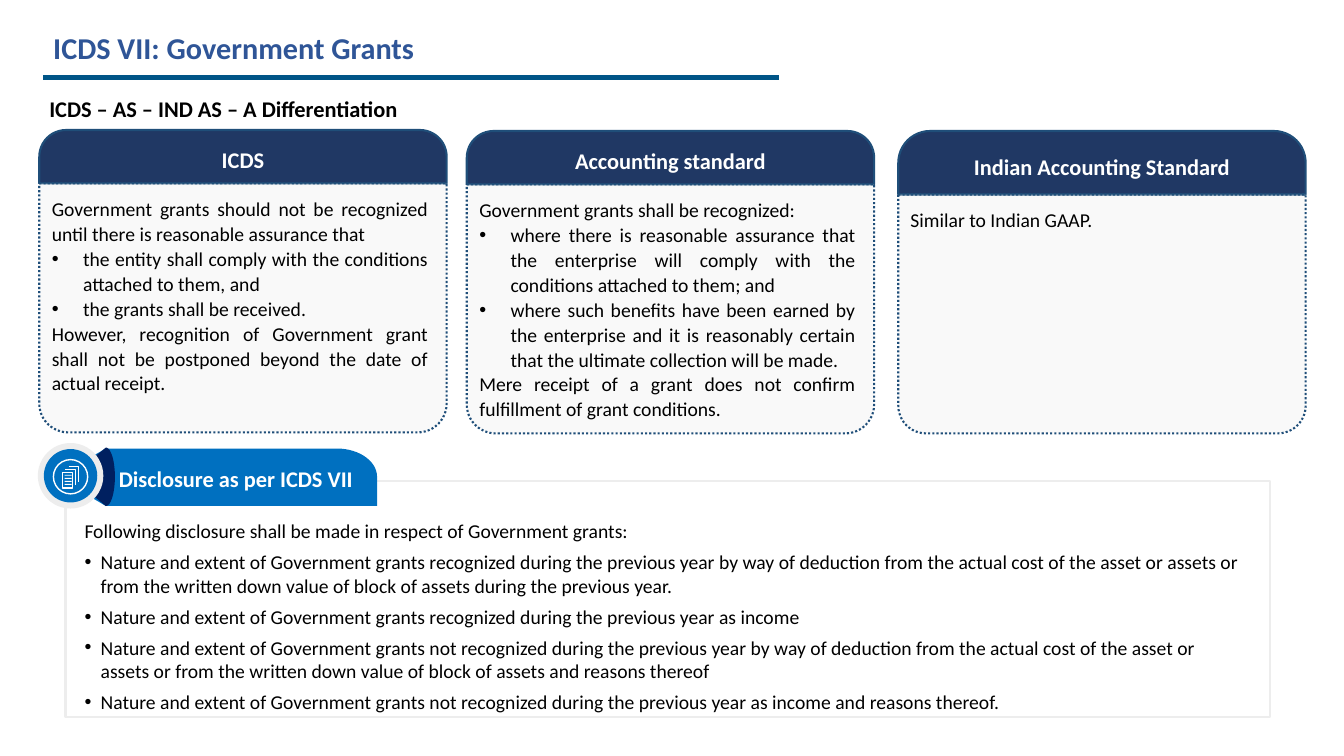
import math
from lxml import etree
from pptx import Presentation
from pptx.dml.color import RGBColor
from pptx.enum import dml, shapes, text
from pptx.oxml.ns import qn
from pptx.util import Inches, Pt

S, A = shapes.MSO_SHAPE, text.PP_ALIGN


def style(sp, fill=None, line=None, width=1.5):
    sp.shadow.inherit = False
    if fill:
        sp.fill.solid()
        sp.fill.fore_color.rgb = RGBColor.from_string(fill)
    else:
        sp.fill.background()
    if line:
        sp.line.color.rgb = RGBColor.from_string(line)
        sp.line.width = Pt(width)
    else:
        sp.line.fill.background()


def write(sp, lines, size, color='000000', bold=False, align=A.LEFT, spacing=1.0,
          before=0, indent=0, anchor=text.MSO_ANCHOR.TOP, insets=(0.1, 0.05, 0.1, 0.05)):
    tf = sp.text_frame
    tf.word_wrap = True
    tf.vertical_anchor = anchor
    tf.margin_left, tf.margin_top, tf.margin_right, tf.margin_bottom = map(Inches, insets)
    tf.text = '\n'.join(line.removeprefix('• ') for line in lines)
    for p, line in zip(tf.paragraphs, lines):
        p.alignment, p.line_spacing, p.space_before = align, spacing, Pt(before)
        f = p.runs[0].font
        f.name, f.size, f.bold = 'Calibri', Pt(size), bold
        f.color.rgb = RGBColor.from_string(color)
        if line.startswith('• '):
            pPr = p._p.get_or_add_pPr()
            pPr.set('marL', str(Inches(indent)))
            pPr.set('indent', str(-Inches(indent)))
            etree.SubElement(pPr, qn('a:buFont')).set('typeface', 'Arial')
            etree.SubElement(pPr, qn('a:buChar')).set('char', '•')


prs = Presentation()
prs.slide_width, prs.slide_height = Inches(13.33), Inches(7.5)
s = prs.slides.add_slide(prs.slide_layouts[6])
MIDDLE = text.MSO_ANCHOR.MIDDLE

tb = s.shapes.add_textbox(Inches(0.43), Inches(0.34), Inches(4.83), Inches(0.31))
write(tb, ['ICDS VII: Government Grants'], 21.6, '2F5597', True, spacing=0.9, anchor=MIDDLE)
rule = s.shapes.add_connector(shapes.MSO_CONNECTOR.STRAIGHT,
                              Inches(0.43), Inches(0.77), Inches(7.73), Inches(0.77))
rule.line.color.rgb = RGBColor.from_string('005587')
rule.line.width = Pt(3)
etree.SubElement(rule._element.spPr, qn('a:effectLst'))
tb = s.shapes.add_textbox(Inches(0.39), Inches(0.89), Inches(12.25), Inches(0.37))
write(tb, ['ICDS – AS – IND AS – A Differentiation'], 16, bold=True)

cards = [
    (0.39, 1.29, 0.53, 4.29, 'ICDS', [
        'Government grants should not be recognized until there is reasonable assurance that',
        '• the entity shall comply with the conditions attached to them, and',
        '• the grants shall be received.',
        'However, recognition of Government grant shall not be postponed beyond the date of '
        'actual receipt.']),
    (4.63, 1.3, 0.53, 4.3, 'Accounting standard', [
        'Government grants shall be recognized:',
        '• where there is reasonable assurance that the enterprise will comply with the '
        'conditions attached to them; and',
        '• where such benefits have been earned by the enterprise and it is reasonably certain '
        'that the ultimate collection will be made.',
        'Mere receipt of a grant does not confirm fulfillment of grant conditions.']),
    (8.91, 1.3, 0.63, 4.3, 'Indian Accounting Standard', ['Similar to Indian GAAP.']),
]
for x, y, head, bottom, title, lines in cards:
    sp = s.shapes.add_shape(S.ROUND_2_SAME_RECTANGLE, Inches(x), Inches(y), Inches(4.04), Inches(head))
    sp.adjustments[0], sp.adjustments[1] = 0.5, 0
    style(sp, '203864', '1F4E79')
    write(sp, [title], 16, 'FFFFFF', True, A.CENTER, anchor=MIDDLE, insets=(0, 0.1, 0, 0.12))
    sp = s.shapes.add_shape(S.ROUND_2_SAME_RECTANGLE, Inches(x), Inches(y + head),
                            Inches(4.04), Inches(bottom - y - head))
    sp.adjustments[0], sp.adjustments[1] = 0, 0.116
    style(sp, 'ECECEC', '1F4E79')
    sp.line.dash_style = dml.MSO_LINE.ROUND_DOT
    clr = sp._element.spPr.find(qn('a:solidFill'))[0]
    etree.SubElement(clr, qn('a:alpha')).set('val', '28000')
    write(sp, lines, 14, align=A.JUSTIFY, spacing=1.06, indent=0.31, insets=(0.04, 0.12, 0.1, 0.1))

panel = s.shapes.add_shape(S.RECTANGLE, Inches(0.65), Inches(4.77), Inches(11.95), Inches(2.34))
style(panel, 'FFFFFF', 'EDEDED')
tb = s.shapes.add_textbox(Inches(0.74), Inches(5.1), Inches(11.67), Inches(2.34))
write(tb, [
    'Following disclosure shall be made in respect of Government grants:',
    '• Nature and extent of Government grants recognized during the previous year by way of '
    'deduction from the actual cost of the asset or assets or from the written down value of '
    'block of assets during the previous year.',
    '• Nature and extent of Government grants recognized during the previous year as income',
    '• Nature and extent of Government grants not recognized during the previous year by way of '
    'deduction from the actual cost of the asset or assets or from the written down value of '
    'block of assets and reasons thereof',
    '• Nature and extent of Government grants not recognized during the previous year as income '
    'and reasons thereof.'], 14, before=5.3, indent=0.16)

turns = [math.radians(a) for a in range(-90, 91, 6)]
corner = [(3.34 + 0.4 * math.cos(t), 4.73 + 0.28 * math.sin(t)) for t in turns if t <= 0]
edge = [(1.05 + 0.09 * math.cos(t), 4.73 + 0.29 * math.sin(t)) for t in turns]
tab = [(0.56, 4.73), (1.05, 4.45)] + corner + [(3.74, 5.02), (1.05, 5.02)]
for points, color in [(tab, '0070C0'), ([(0.7, 4.73)] + edge, '002060')]:
    points = [(Inches(x), Inches(y)) for x, y in points]
    fb = s.shapes.build_freeform(*points[0])
    fb.add_line_segments(points[1:], close=True)
    style(fb.convert_to_shape(), color)

for cy, d, fill, line in [(4.72, 0.65, 'EDEDED', None), (4.72, 0.53, '0070C0', None),
                          (4.73, 0.34, None, 'FFFFFF')]:
    sp = s.shapes.add_shape(S.OVAL, Inches(0.7 - d / 2), Inches(cy - d / 2), Inches(d), Inches(d))
    style(sp, fill, line, 1)

page = s.shapes.add_shape(S.RECTANGLE, Inches(0.62), Inches(4.69), Inches(0.1), Inches(0.15))
style(page, None, 'FFFFFF', 1)
for i in range(4):
    sp = s.shapes.add_shape(S.RECTANGLE, Inches(0.64), Inches(4.71 + 0.03 * i),
                            Inches(0.07), Inches(0.01))
    style(sp, 'FFFFFF')
for d in (0, 0.03):
    left, right, top, bottom = map(Inches, (0.65 + d, 0.75 + d, 4.66 - d, 4.81 - d))
    fb = s.shapes.build_freeform(left, top)
    fb.add_line_segments([(right, top), (right, bottom)], close=False)
    style(fb.convert_to_shape(), None, 'FFFFFF', 1)

tb = s.shapes.add_textbox(Inches(1.07), Inches(4.52), Inches(2.54), Inches(0.43))
write(tb, ['Disclosure as per ICDS VII'], 16, 'FFFFFF', True, A.CENTER, 1.06,
      anchor=MIDDLE, insets=(0.09,) * 4)

prs.save("out.pptx")
